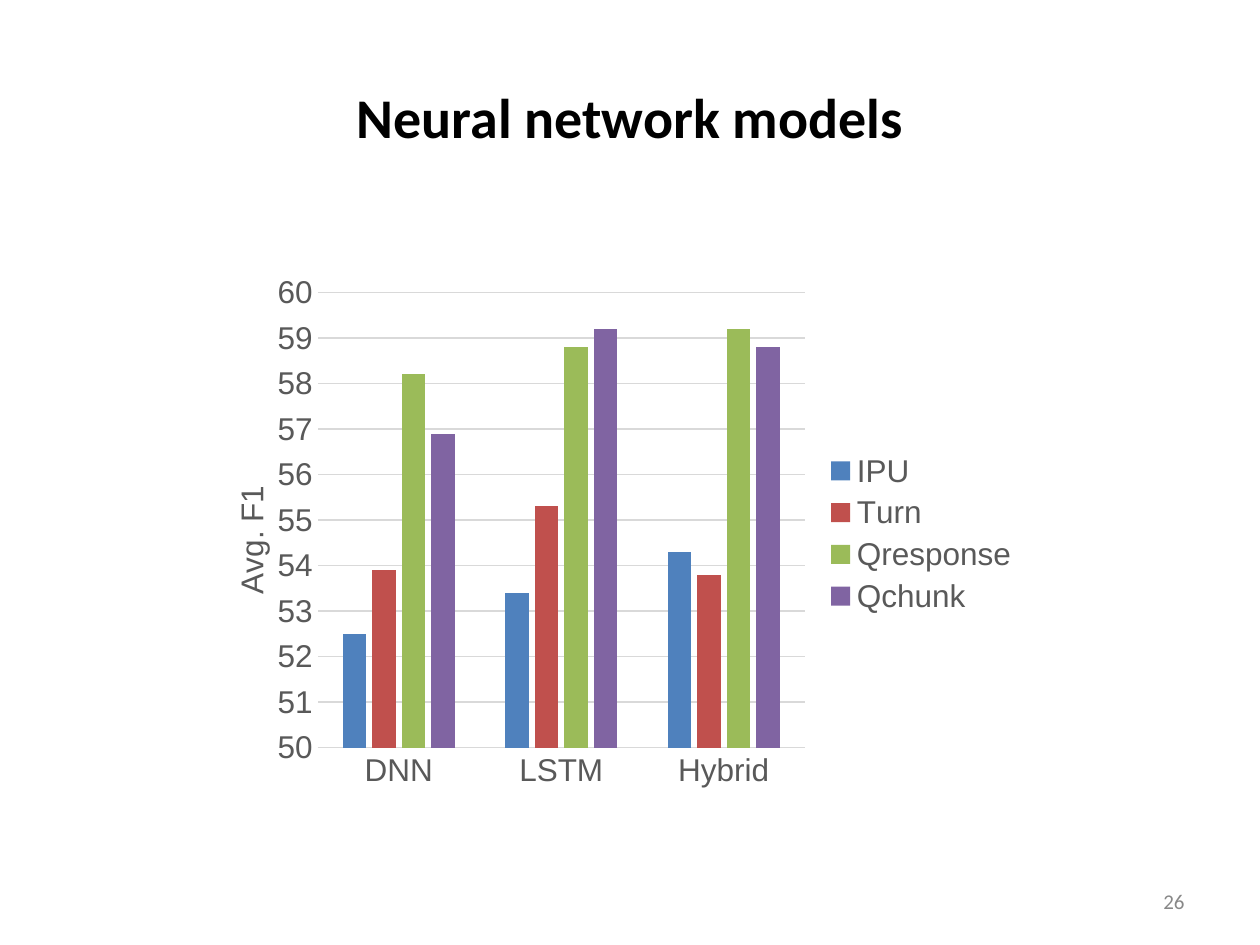
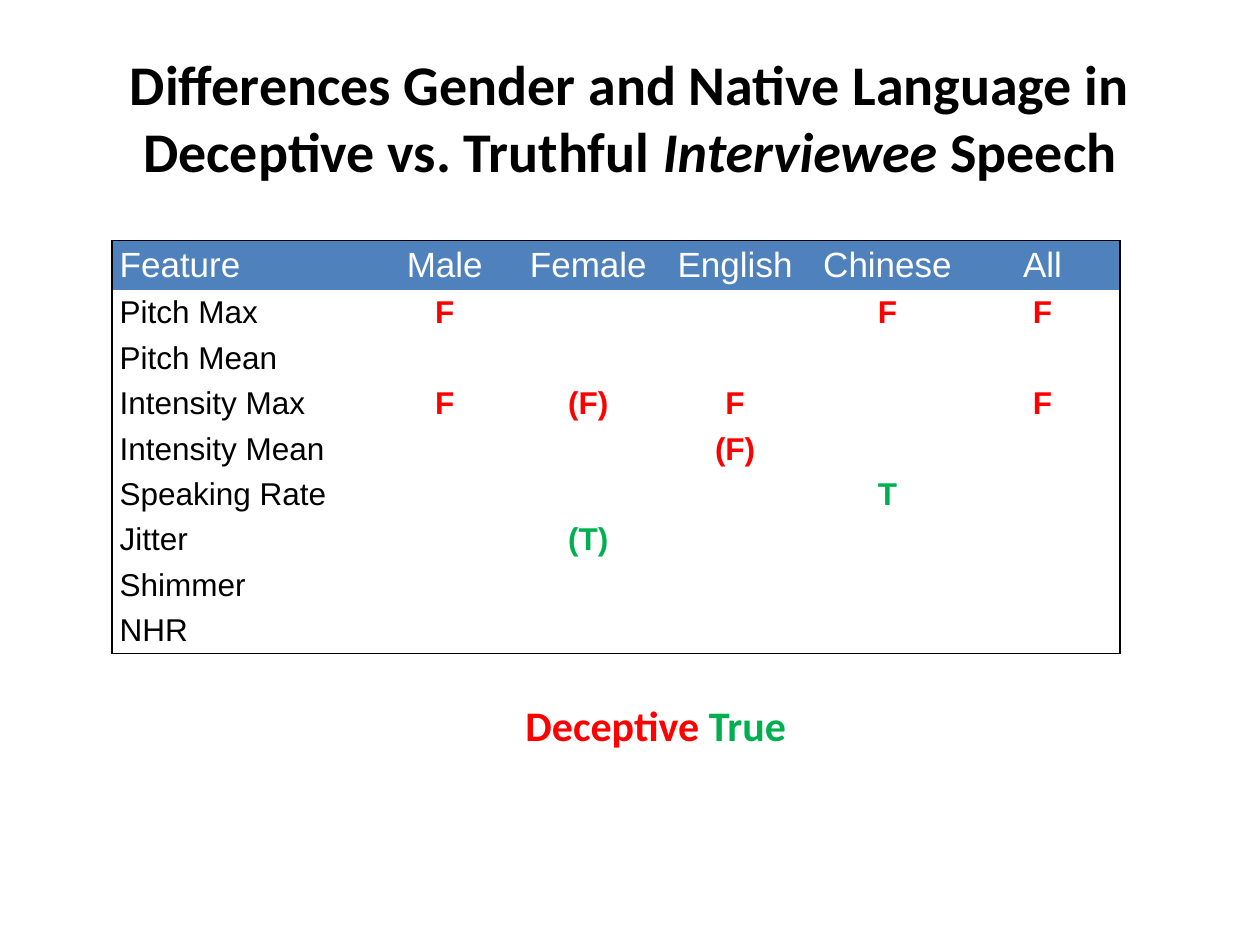
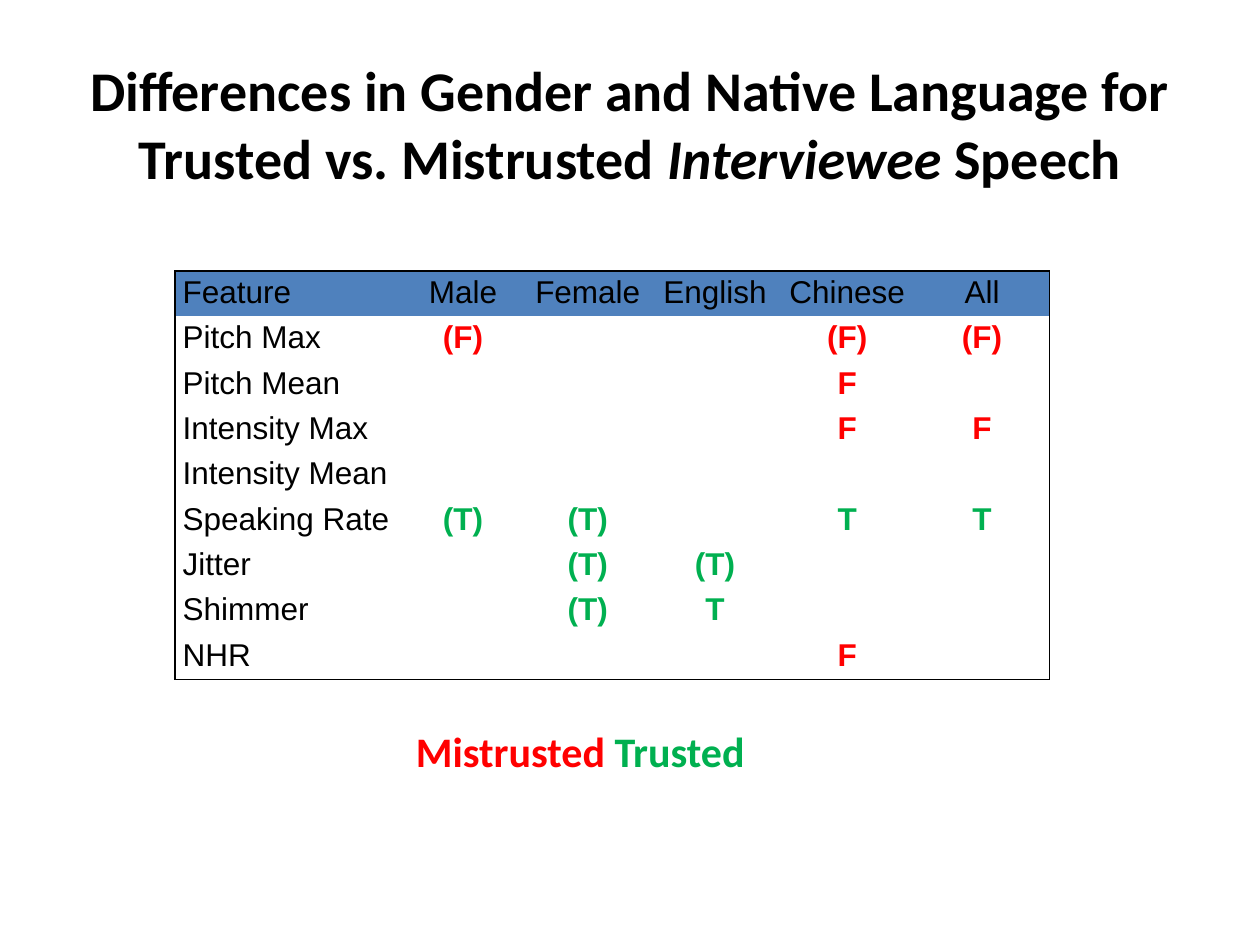
from dataclasses import dataclass

from lxml.etree import SubElement
from pptx import Presentation
from pptx.chart.data import CategoryChartData
from pptx.dml.color import RGBColor
from pptx.enum.chart import XL_CHART_TYPE as ChartType
from pptx.enum.chart import XL_LEGEND_POSITION as LegendPosition
from pptx.enum.chart import XL_TICK_MARK as TickMark
from pptx.enum.text import MSO_ANCHOR as Anchor
from pptx.enum.text import PP_ALIGN as Align
from pptx.oxml import parse_xml
from pptx.oxml.ns import nsdecls, qn
from pptx.slide import Slide
from pptx.util import Inches, Pt


@dataclass(frozen=True)
class Theme:
    heading_font: str = "Calibri"
    body_font: str = "Arial"
    black: str = "000000"
    white: str = "FFFFFF"
    page_number: str = "888888"
    chart_text: str = "595959"
    grid: str = "D9D9D9"
    header: str = "4F81BD"
    negative: str = "FF0000"
    positive: str = "00B050"
    series: tuple[str, ...] = ("4F81BD", "C0504D", "9BBB59", "8064A2")
    title_size: int = 32
    key_size: int = 24
    header_size: int = 20
    body_size: int = 18
    number_size: int = 12


@dataclass(frozen=True)
class Area:
    left: float
    top: float
    width: float
    height: float

    def lengths(self) -> tuple[int, ...]:
        return tuple(Inches(n) for n in (self.left, self.top, self.width, self.height))


@dataclass(frozen=True)
class Span:
    text: str
    color: str | None = None
    italic: bool | None = None


@dataclass(frozen=True)
class FeatureSlide:
    title: tuple[Span, ...]
    title_anchor: Anchor
    table_area: Area
    columns: tuple[float, ...]
    header_color: str
    header_size: int
    cell_anchor: Anchor
    marks: dict[str, tuple[str, ...]]
    key_area: Area
    key: tuple[Span, ...]


THEME = Theme()
TITLE_AREA = Area(0.5, 0.3, 9, 1.25)
NUMBER_AREA = Area(7.17, 6.95, 2.33, 0.4)
CHART_AREA = Area(1.52, 2.11, 6.67, 4.25)
PLAIN_TABLE_STYLE = "{2D5ABB26-0587-4C30-8999-92F81FD0307C}"
HEADINGS = ("Feature", "Male", "Female", "English", "Chinese", "All")
FEATURES = (
    "Pitch Max", "Pitch Mean", "Intensity Max", "Intensity Mean",
    "Speaking Rate", "Jitter", "Shimmer", "NHR",
)
MODELS = ("DNN", "LSTM", "Hybrid")
SCORES = {
    "IPU": (52.5, 53.4, 54.3),
    "Turn": (53.9, 55.3, 53.8),
    "Qresponse": (58.2, 58.8, 59.2),
    "Qchunk": (56.9, 59.2, 58.8),
}
FEATURE_SLIDES = (
    FeatureSlide(
        title=(
            Span("Differences Gender and Native Language in Deceptive vs. Truthful "),
            Span("Interviewee", italic=True),
            Span(" Speech"),
        ),
        title_anchor=Anchor.MIDDLE,
        table_area=Area(0.89, 1.91, 8.02, 3.24),
        columns=(2.07, 1.14, 1.14, 1.19, 1.23, 1.23),
        header_color=THEME.white,
        header_size=THEME.header_size,
        cell_anchor=Anchor.MIDDLE,
        marks={
            "Pitch Max": ("F", "", "", "F", "F"),
            "Intensity Max": ("F", "(F)", "F", "", "F"),
            "Intensity Mean": ("", "", "(F)", "", ""),
            "Speaking Rate": ("", "", "", "T", ""),
            "Jitter": ("", "(T)", "", "", ""),
        },
        key_area=Area(4.1, 5.61, 2.32, 0.29),
        key=(Span("Deceptive ", THEME.negative), Span("True", THEME.positive)),
    ),
    FeatureSlide(
        title=(
            Span("Differences in Gender and Native Language for Trusted vs. Mistrusted "),
            Span("Interviewee", italic=True),
            Span(" Speech"),
        ),
        title_anchor=Anchor.BOTTOM,
        table_area=Area(1.39, 2.15, 6.94, 3.21),
        columns=(1.79, 0.99, 0.99, 1.03, 1.07, 1.07),
        header_color=THEME.black,
        header_size=THEME.body_size,
        cell_anchor=Anchor.TOP,
        marks={
            "Pitch Max": ("(F)", "", "", "(F)", "(F)"),
            "Pitch Mean": ("", "", "", "F", ""),
            "Intensity Max": ("", "", "", "F", "F"),
            "Speaking Rate": ("(T)", "(T)", "", "T", "T"),
            "Jitter": ("", "(T)", "(T)", "", ""),
            "Shimmer": ("", "(T)", "T", "", ""),
            "NHR": ("", "", "", "F", ""),
        },
        key_area=Area(3.23, 5.76, 3.39, 0.39),
        key=(Span("Mistrusted ", THEME.negative), Span("Trusted", THEME.positive)),
    ),
)


def set_font(font, name: str, size: int, color: str, bold: bool = False) -> None:
    font.name = name
    font.size = Pt(size)
    font.bold = bold
    font.color.rgb = RGBColor.from_string(color)


def add_text(
    page: Slide, area: Area, spans: tuple[Span, ...], size: int, color: str = THEME.black,
    bold: bool = True, align: Align = Align.LEFT, anchor: Anchor = Anchor.MIDDLE,
    margins: tuple[float, float] = (0.07, 0.07),
) -> None:
    frame = page.shapes.add_textbox(*area.lengths()).text_frame
    frame.word_wrap = True
    frame.vertical_anchor = anchor
    frame.margin_left = frame.margin_right = Inches(margins[0])
    frame.margin_top = frame.margin_bottom = Inches(margins[1])
    para = frame.paragraphs[0]
    para.alignment = align
    set_font(para.font, THEME.heading_font, size, color, bold)
    for span in spans:
        run = para.add_run()
        run.text = span.text
        if span.italic:
            run.font.italic = True
        if span.color:
            run.font.color.rgb = RGBColor.from_string(span.color)


def add_title(page: Slide, spans: tuple[Span, ...], anchor: Anchor = Anchor.MIDDLE) -> None:
    add_text(page, TITLE_AREA, spans, THEME.title_size, align=Align.CENTER,
             anchor=anchor, margins=(0.07, 0.04))


def place(element, **fractions: float) -> None:
    old = element.find(qn("c:layout"))
    layout = parse_xml(f"<c:layout {nsdecls('c')}/>")
    manual = SubElement(layout, qn("c:manualLayout"))
    if "w" in fractions:
        SubElement(manual, qn("c:layoutTarget")).set("val", "inner")
    for side in ("xMode", "yMode"):
        SubElement(manual, qn(f"c:{side}")).set("val", "edge")
    for name, fraction in fractions.items():
        SubElement(manual, qn(f"c:{name}")).set("val", str(fraction))
    if old is not None:
        element.replace(old, layout)
    elif "w" in fractions:
        element.insert(0, layout)
    else:
        element.find(qn("c:tx")).addnext(layout)


def add_scores_chart(page: Slide) -> None:
    data = CategoryChartData()
    data.categories = MODELS
    for name, scores in SCORES.items():
        data.add_series(name, scores)
    chart = page.shapes.add_chart(
        ChartType.COLUMN_CLUSTERED, *CHART_AREA.lengths(), data
    ).chart
    set_font(chart.font, THEME.body_font, THEME.body_size, THEME.chart_text)
    chart.has_title = False
    chart.has_legend = True
    chart.legend.position = LegendPosition.RIGHT
    chart.legend.include_in_layout = False

    plot = chart.plots[0]
    plot.vary_by_categories = False
    plot.gap_width = 219
    plot.overlap = -27
    for series, color in zip(plot.series, THEME.series):
        series.format.fill.solid()
        series.format.fill.fore_color.rgb = RGBColor.from_string(color)

    scale = chart.value_axis
    scale.minimum_scale, scale.maximum_scale, scale.major_unit = 50, 60, 1
    scale.tick_labels.number_format = "General"
    scale.tick_labels.number_format_is_linked = False
    scale.format.line.fill.background()
    for axis in (scale, chart.category_axis):
        axis.major_tick_mark = axis.minor_tick_mark = TickMark.NONE
        set_font(axis.tick_labels.font, THEME.body_font, THEME.body_size, THEME.chart_text)
    for line in (scale.major_gridlines.format.line, chart.category_axis.format.line):
        line.color.rgb = RGBColor.from_string(THEME.grid)
        line.width = Pt(0.75)

    caption = scale.axis_title.text_frame
    caption.text = "Avg. F1"
    set_font(caption.paragraphs[0].font, THEME.body_font, THEME.body_size, THEME.chart_text)
    body = caption._txBody.find(qn("a:bodyPr"))
    body.set("rot", "-5400000")
    body.set("vert", "horz")
    place(scale.axis_title._element, x=0.04, y=0.4)
    place(chart._chartSpace.chart.plotArea, x=0.15, y=0.05, w=0.58, h=0.85)


def add_border(cell, side: str, width: float) -> None:
    cell._tc.get_or_add_tcPr().append(parse_xml(
        f'<a:ln{side} {nsdecls("a")} w="{Pt(width)}"><a:solidFill>'
        f'<a:srgbClr val="{THEME.black}"/></a:solidFill></a:ln{side}>'
    ))


def add_feature_table(page: Slide, content: FeatureSlide) -> None:
    blank = ("",) * (len(HEADINGS) - 1)
    rows = [HEADINGS] + [(name, *content.marks.get(name, blank)) for name in FEATURES]
    last_row, last_column = len(rows) - 1, len(HEADINGS) - 1
    table = page.shapes.add_table(
        len(rows), len(HEADINGS), *content.table_area.lengths()
    ).table
    table.first_row = table.horz_banding = False
    table._tbl.tblPr.find(qn("a:tableStyleId")).text = PLAIN_TABLE_STYLE
    for column, width in zip(table.columns, content.columns):
        column.width = Inches(width)
    for r, texts in enumerate(rows):
        table.rows[r].height = Inches(content.table_area.height / len(rows))
        for c, text in enumerate(texts):
            cell = table.cell(r, c)
            cell.margin_left = cell.margin_right = Inches(0.06)
            cell.margin_top = cell.margin_bottom = Inches(0.03)
            cell.vertical_anchor = content.cell_anchor
            for side, width, at_edge in (
                ("L", 1, c == 0), ("R", 0.75, c == last_column),
                ("T", 1, r == 0), ("B", 1, r == last_row),
            ):
                if at_edge:
                    add_border(cell, side, width)
            size, color, bold = THEME.body_size, THEME.black, False
            if r == 0:
                cell.fill.solid()
                cell.fill.fore_color.rgb = RGBColor.from_string(THEME.header)
                size, color = content.header_size, content.header_color
            else:
                cell.fill.background()
                if c > 0:
                    color = THEME.negative if "F" in text else THEME.positive
                    bold = True
            if text:
                cell.text = text
            para = cell.text_frame.paragraphs[0]
            para.alignment = Align.CENTER if c else Align.LEFT
            set_font(para.font, THEME.body_font, size, color, bold)


def main() -> None:
    deck = Presentation()
    deck.slide_width, deck.slide_height = Inches(10), Inches(7.5)
    blank_layout = deck.slide_layouts[6]

    page = deck.slides.add_slide(blank_layout)
    add_title(page, (Span("Neural network models"),))
    add_text(page, NUMBER_AREA, (Span("26"),), THEME.number_size, THEME.page_number,
             bold=False, align=Align.RIGHT, margins=(0.1, 0.05))
    add_scores_chart(page)

    for content in FEATURE_SLIDES:
        page = deck.slides.add_slide(blank_layout)
        add_title(page, content.title, content.title_anchor)
        add_feature_table(page, content)
        add_text(page, content.key_area, content.key, THEME.key_size)

    deck.save("out.pptx")


if __name__ == "__main__":
    main()
